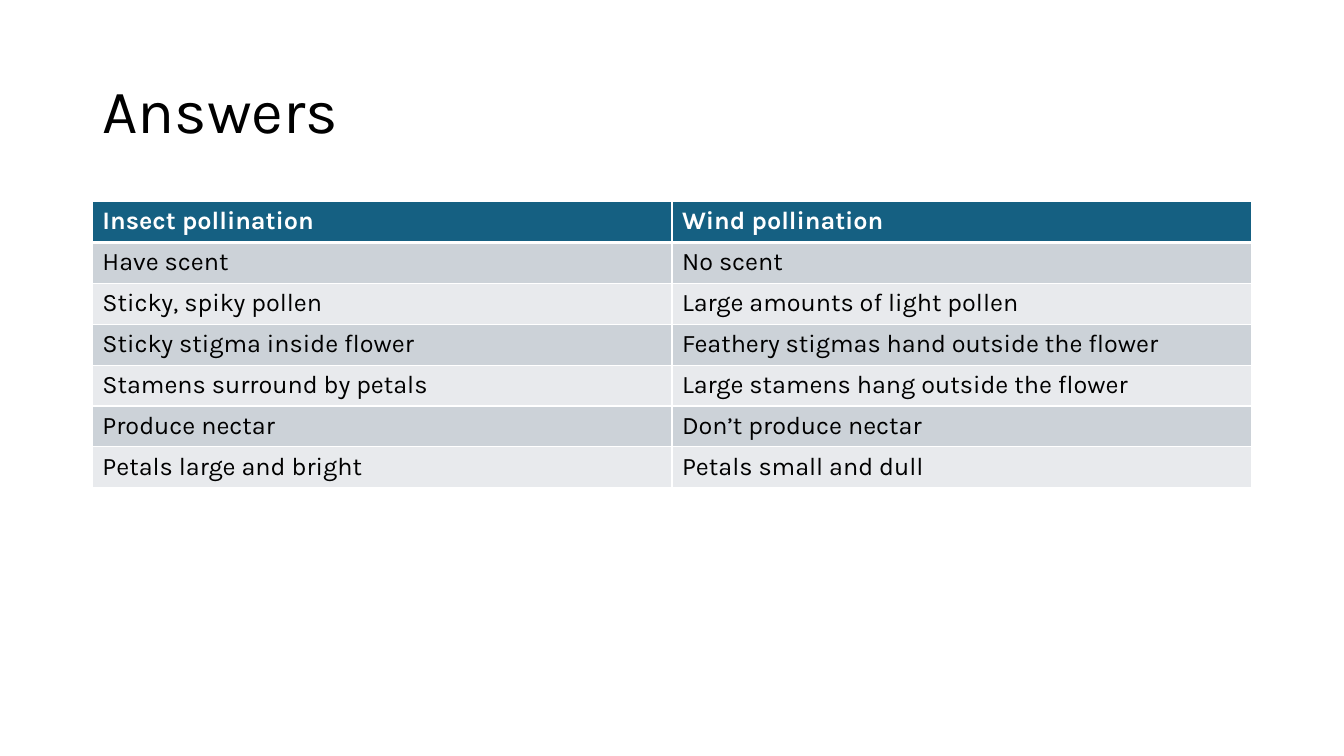
"""Build the slide that compares insect and wind pollination."""
from lxml import etree
from pptx import Presentation
from pptx.dml.color import RGBColor
from pptx.enum import text as t
from pptx.oxml import ns
from pptx.util import Pt

TITLE = "Answers"
ROWS = [
    ("Insect pollination", "Wind pollination"),
    ("Have scent", "No scent"),
    ("Sticky, spiky pollen", "Large amounts of light pollen"),
    ("Sticky stigma inside flower", "Feathery stigmas hand outside the flower"),
    ("Stamens surround by petals", "Large stamens hang outside the flower"),
    ("Produce nectar", "Don’t produce nectar"),
    ("Petals large and bright", "Petals small and dull"),
]
THEME = {
    "font": "Karla", "title": 44, "body": 18,
    "ink": "000000", "white": "FFFFFF",
    "header": "156082", "bands": ("E8EAED", "CCD2D8"),
}
SLIDE_W, SLIDE_H = 960, 540
LEFT, WIDTH = 66, 828
TITLE_TOP, TITLE_H = 28.75, 104.4
TABLE_TOP, ROW_H = 144, 29.2
RULE, HEADER_RULE = 1, 3


def write(tf, text, size=THEME["body"], color=THEME["ink"], bold=False, spacing=1):
    p = tf.paragraphs[0]
    p.alignment, p.line_spacing = t.PP_ALIGN.LEFT, spacing
    r = p.add_run()
    r.text = text
    r.font.name, r.font.size, r.font.bold = THEME["font"], Pt(size), bold
    r.font.color.rgb = RGBColor.from_string(color)


def add_borders(cell, **widths):
    tc_pr = cell._tc.get_or_add_tcPr()
    for i, side in enumerate("LRTB"):
        ln = etree.Element(ns.qn(f"a:ln{side}"), w=str(Pt(widths.get(side, RULE))))
        fill = etree.SubElement(ln, ns.qn("a:solidFill"))
        etree.SubElement(fill, ns.qn("a:srgbClr"), val=THEME["white"])
        tc_pr.insert(i, ln)


def add_title(slide):
    sp = slide.shapes.title
    sp.left, sp.top, sp.width, sp.height = map(Pt, (LEFT, TITLE_TOP, WIDTH, TITLE_H))
    tf = sp.text_frame
    tf.auto_size, tf.vertical_anchor = t.MSO_AUTO_SIZE.NONE, t.MSO_ANCHOR.MIDDLE
    write(tf, TITLE, size=THEME["title"], spacing=0.9)


def add_answers(slide):
    n_rows, n_cols = len(ROWS), len(ROWS[0])
    box = map(Pt, (LEFT, TABLE_TOP, WIDTH, ROW_H * n_rows))
    table = slide.shapes.add_table(n_rows, n_cols, *box).table
    for i, row in enumerate(ROWS):
        table.rows[i].height = Pt(ROW_H)
        header = i == 0
        for j, text in enumerate(row):
            cell = table.cell(i, j)
            cell.fill.solid()
            fill = THEME["header"] if header else THEME["bands"][i % 2]
            cell.fill.fore_color.rgb = RGBColor.from_string(fill)
            add_borders(cell, B=HEADER_RULE if header else RULE,
                        T=HEADER_RULE if i == 1 else RULE)
            write(cell.text_frame, text, bold=header,
                  color=THEME["white"] if header else THEME["ink"])


def main():
    prs = Presentation()
    prs.slide_width, prs.slide_height = Pt(SLIDE_W), Pt(SLIDE_H)
    slide = prs.slides.add_slide(prs.slide_layouts[5])
    add_title(slide)
    add_answers(slide)
    prs.save("out.pptx")


if __name__ == "__main__":
    main()
